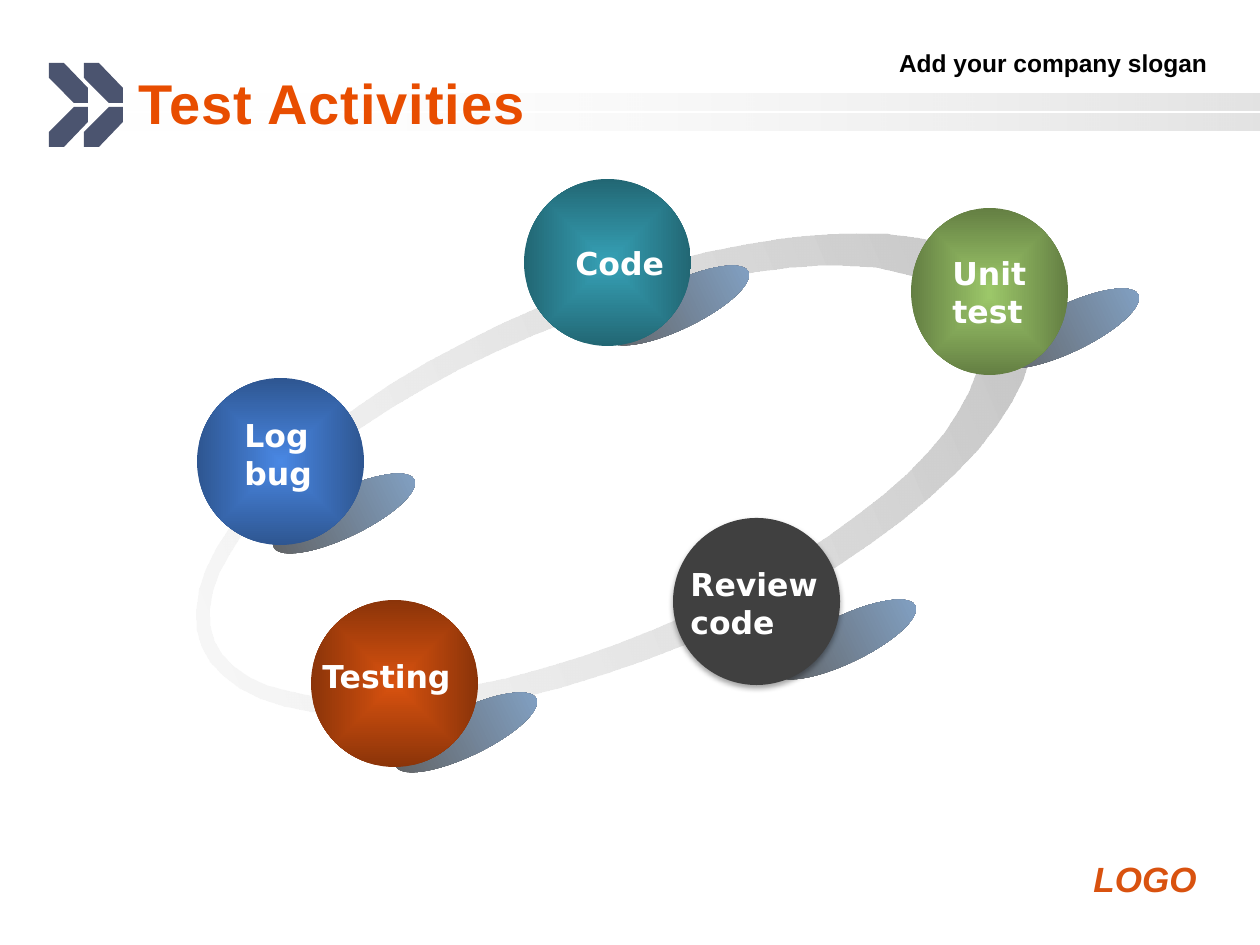
import math

import pptx
import pptx.dml.color
import pptx.enum.shapes
import pptx.enum.text
import pptx.oxml
import pptx.oxml.ns
import pptx.util

EMU_PER_PX = 914400 / 126
OVAL = pptx.enum.shapes.MSO_SHAPE.OVAL
RECTANGLE = pptx.enum.shapes.MSO_SHAPE.RECTANGLE
ALIGN = pptx.enum.text.PP_ALIGN
FIT = pptx.enum.text.MSO_AUTO_SIZE

ORANGE = "D9520F"
RING_STEPS = 64

ACTIVITIES = [
    ("Code", (524, 179, 167, 167), "36A1B6", (76, 103), (39, 59, 121, 55)),
    ("Unit\ntest", (911, 208, 157, 167), "9CC769", (79, 97), (29, 40, 117, 98)),
    ("Review\ncode", (673, 518, 167, 167), None, (94, 98), (5, 41, 165, 98)),
    ("Testing", (311, 600, 167, 167), ORANGE, (77, 109), (-1, 51, 168, 55)),
    ("Log\nbug", (197, 378, 167, 167), "4987E3", (69, 112), (35, 32, 107, 98)),
]


def px(length):
    return pptx.util.Emu(round(length * EMU_PER_PX))


def color(hex_value):
    return pptx.dml.color.RGBColor.from_string(hex_value)


def xml(markup):
    namespaces = pptx.oxml.ns.nsdecls("a")
    return pptx.oxml.parse_xml(markup.replace(">", f" {namespaces}>", 1))


def fill_plain(shape, hex_value):
    shape.fill.solid()
    shape.fill.fore_color.rgb = color(hex_value)
    shape.line.fill.background()
    shape.shadow.inherit = False


def fill_gradient(shape, start, end, direction='<a:lin ang="0" scaled="1"/>'):
    fill_plain(shape, start[0])
    stops = "".join(
        f'<a:gs pos="{position}"><a:srgbClr val="{hex_value}">{modifier}</a:srgbClr></a:gs>'
        for position, (hex_value, modifier) in ((0, start), (100000, end))
    )
    gradient = xml(f'<a:gradFill rotWithShape="1"><a:gsLst>{stops}</a:gsLst>{direction}</a:gradFill>')
    solid = shape._element.spPr.find(pptx.oxml.ns.qn("a:solidFill"))
    solid.getparent().replace(solid, gradient)


def outer_shadow(blur, distance, degrees, hex_value, alpha):
    return (
        f'<a:outerShdw blurRad="{pptx.util.Pt(blur)}" dist="{pptx.util.Pt(distance)}" '
        f'dir="{degrees * 60000}" rotWithShape="0"><a:srgbClr val="{hex_value}">'
        f'<a:alpha val="{alpha}000"/></a:srgbClr></a:outerShdw>'
    )


def add_shape(slide, kind, box):
    return slide.shapes.add_shape(kind, *map(px, box))


def add_outline(slide, contours):
    builder = slide.shapes.build_freeform(*contours[0][0], scale=EMU_PER_PX)
    builder.add_line_segments(contours[0][1:], close=True)
    for contour in contours[1:]:
        builder.move_to(*contour[0])
        builder.add_line_segments(contour[1:], close=True)
    return builder.convert_to_shape()


def format_runs(frame, font_name, size, hex_value):
    for paragraph in frame.paragraphs:
        for run in paragraph.runs:
            run.font.name = font_name
            run.font.size = pptx.util.Pt(size)
            run.font.bold = True
            run.font.color.rgb = color(hex_value)


def add_text(slide, box, text, font_name, size, hex_value, wrap=True):
    frame = slide.shapes.add_textbox(*map(px, box)).text_frame
    frame.text = text
    frame.word_wrap = wrap
    frame.auto_size = FIT.SHAPE_TO_FIT_TEXT
    format_runs(frame, font_name, size, hex_value)
    return frame


def draw_bands(slide, box):
    left, top, width, height = box
    band_height = 17
    for band_top in (top, top + height - band_height):
        band = add_shape(slide, RECTANGLE, (left, band_top, width, band_height))
        fill_gradient(band, ("FFFFFF", '<a:alpha val="0"/>'), ("969696", '<a:alpha val="27000"/>'))


def draw_chevrons(slide, box):
    left, top, width, height = box
    upper_arm = [(0, 0), (0, 15), (25, 40), (39, 40), (39, 25), (15, 0)]
    lower_arm = [(x, height - y) for x, y in upper_arm]
    for chevron_left in (left, left + width - 39):
        for arm in (upper_arm, lower_arm):
            points = [(chevron_left + x, top + y) for x, y in arm]
            fill_plain(add_outline(slide, [points]), "4B546F")


def draw_title(slide, box):
    title = slide.shapes.title
    title.left, title.top, title.width, title.height = map(px, box)
    frame = title.text_frame
    frame.text = "Test Activities"
    frame.word_wrap = True
    frame.auto_size = FIT.NONE
    frame.vertical_anchor = pptx.enum.text.MSO_ANCHOR.MIDDLE
    frame.paragraphs[0].alignment = ALIGN.LEFT
    format_runs(frame, "Arial", 32, "E84D00")
    frame.paragraphs[0].runs[0]._r.get_or_add_rPr().set("spc", "50")
    title._element.getparent().append(title._element)


def draw_slogan(slide, box):
    frame = add_text(slide, box, "Add your company slogan", "Arial", 14, "000000")
    frame.paragraphs[0].alignment = ALIGN.RIGHT


def draw_logo_text(slide, box):
    frame = add_text(slide, box, "LOGO", "Arial", 20, ORANGE)
    run = frame.paragraphs[0].runs[0]
    run.font.italic = True
    text_shadow = outer_shadow(0, 2, 45, "808080", 100)
    solid = run._r.get_or_add_rPr().find(pptx.oxml.ns.qn("a:solidFill"))
    solid.addnext(xml(f"<a:effectLst>{text_shadow}</a:effectLst>"))


def ellipse_points(center_x, center_y, radius_x, radius_y, turn):
    angles = [turn * 2 * math.pi * step / RING_STEPS for step in range(RING_STEPS)]
    return [
        (round(center_x + radius_x * math.cos(angle)), round(center_y + radius_y * math.sin(angle)))
        for angle in angles
    ]


def draw_ring(slide, box):
    left, top, width, height = box
    center_x, center_y = left + width / 2, top + height / 2
    outer = ellipse_points(center_x, center_y, width / 2, height / 2, 1)
    inner = ellipse_points(center_x - 21, center_y - 1, width / 2 - 35, height / 2 - 25, -1)
    ring = add_outline(slide, [outer, inner])
    fill_gradient(ring, ("EEEEEE", '<a:alpha val="36000"/>'), ("C0C0C0", ""))
    ring.rotation = 337.4


def draw_activity(slide, box, label, hex_value, shade_offset, label_box):
    left, top = box[:2]
    shade = add_shape(slide, OVAL, (left + shade_offset[0], top + shade_offset[1], 156, 47))
    fill_gradient(shade, ("5F5F5F", ""), ("84A5CA", ""))
    shade.rotation = 334.3
    ball = add_shape(slide, OVAL, box)
    if hex_value:
        center = '<a:path path="shape"><a:fillToRect l="50000" t="50000" r="50000" b="50000"/></a:path>'
        fill_gradient(ball, (hex_value, ""), (hex_value, '<a:shade val="36000"/>'), center)
    else:
        fill_plain(ball, "404040")
        effects = ball._element.spPr.find(pptx.oxml.ns.qn("a:effectLst"))
        effects.append(xml(outer_shadow(3.1, 1.8, 90, "000000", 35)))
    x, y, width, height = label_box
    add_text(slide, (left + x, top + y, width, height), label, "DejaVu Sans", 18, "FFFFFF", wrap=False)


def main():
    deck = pptx.Presentation()
    deck.slide_width, deck.slide_height = px(1260), px(945)
    slide = deck.slides.add_slide(deck.slide_layouts[5])
    draw_bands(slide, (94, 94, 1166, 37))
    draw_chevrons(slide, (49, 63, 74, 84))
    draw_slogan(slide, (462, 42, 758, 42))
    draw_logo_text(slide, (1081, 851, 147, 54))
    draw_ring(slide, (168, 291, 892, 367))
    for label, box, hex_value, shade_offset, label_box in ACTIVITIES:
        draw_activity(slide, box, label, hex_value, shade_offset, label_box)
    draw_title(slide, (126, 63, 1040, 79))
    deck.save("out.pptx")


if __name__ == "__main__":
    main()
